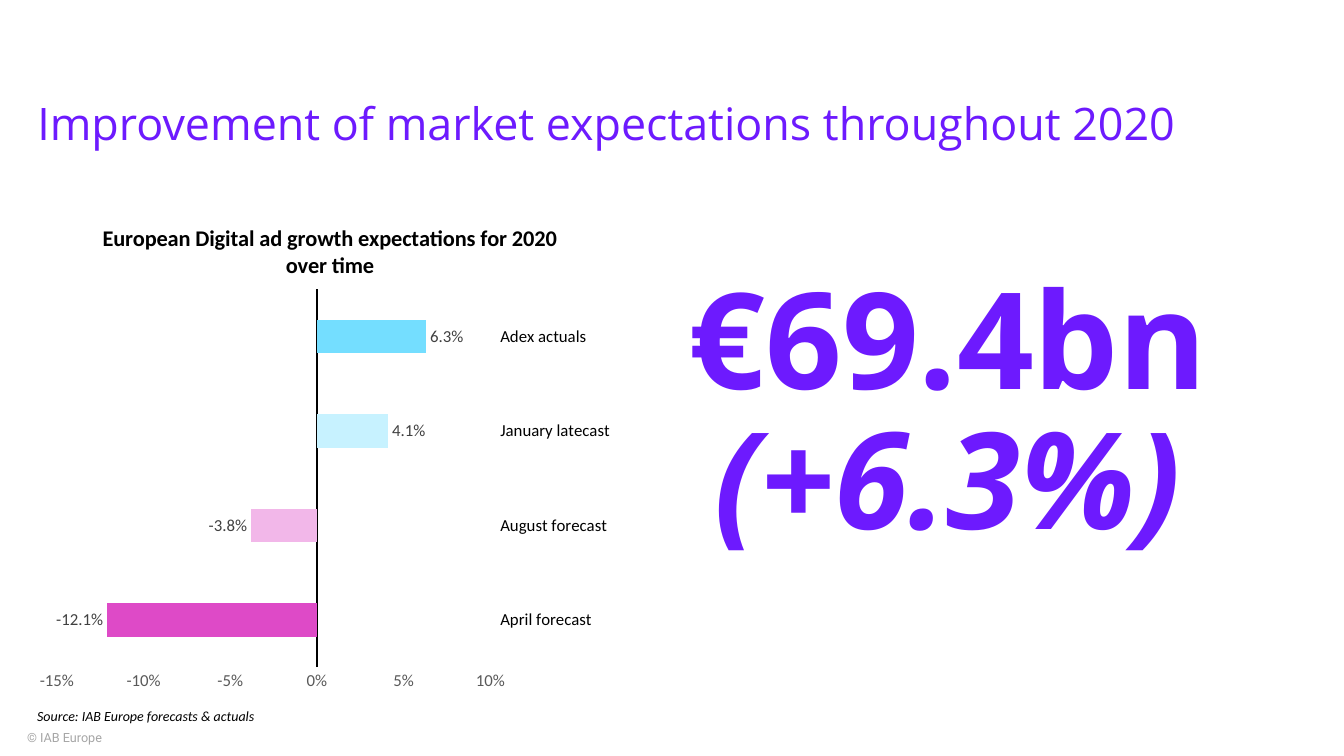
from lxml import etree
from pptx import Presentation
from pptx.chart.data import CategoryChartData
from pptx.dml.color import RGBColor
from pptx.enum.chart import XL_CHART_TYPE, XL_LABEL_POSITION, XL_TICK_LABEL_POSITION, XL_TICK_MARK
from pptx.enum.text import MSO_ANCHOR, PP_ALIGN
from pptx.oxml import parse_xml
from pptx.oxml.ns import nsdecls, qn
from pptx.util import Inches, Pt

PURPLE = RGBColor(0x6D, 0x1A, 0xFE)
BLACK = RGBColor(0, 0, 0)
DARK_GRAY = RGBColor(0x40, 0x40, 0x40)
GRAY = RGBColor(0x59, 0x59, 0x59)
LIGHT_GRAY = RGBColor(0xA6, 0xA6, 0xA6)
MAGENTA = RGBColor(0xDE, 0x4A, 0xC7)
PINK = RGBColor(0xF2, 0xB7, 0xE9)
PALE_BLUE = RGBColor(0xC7, 0xF2, 0xFF)
BLUE = RGBColor(0x74, 0xDE, 0xFF)

FORECASTS = [
    ("April forecast", -0.121, MAGENTA),
    ("August forecast", -0.038, PINK),
    ("January latecast", 0.041, PALE_BLUE),
    ("Adex actuals", 0.063, BLUE),
]


def format_font(font, size, color, name="Calibri", bold=False, italic=False):
    font.name = name
    font.size = Pt(size)
    font.bold = bold
    font.italic = italic
    font.color.rgb = color


def write_text(paragraph, text, align=PP_ALIGN.LEFT, line_spacing=1.0, space_before=0, **font_format):
    paragraph.alignment = align
    paragraph.line_spacing = line_spacing
    paragraph.space_before = Pt(space_before)
    run = paragraph.add_run()
    run.text = text
    format_font(run.font, **font_format)


def set_layout(parent, **fractions):
    """Place a chart part by fractions of the chart area."""
    for old_layout in parent.findall(qn("c:layout")):
        parent.remove(old_layout)
    layout = parse_xml(f"<c:layout {nsdecls('c')}><c:manualLayout/></c:layout>")
    for tag, value in fractions.items():
        etree.SubElement(layout[0], qn(f"c:{tag}")).set("val", str(value))
    return layout


class SlideBuilder:
    def __init__(self, presentation):
        self.slide = presentation.slides.add_slide(presentation.slide_layouts[5])

    def add_title(self, text, left, top, width, height):
        title = self.slide.shapes.title
        title.left, title.top = Inches(left), Inches(top)
        title.width, title.height = Inches(width), Inches(height)
        frame = title.text_frame
        frame.word_wrap = True
        frame.vertical_anchor = MSO_ANCHOR.MIDDLE
        write_text(frame.paragraphs[0], text, line_spacing=0.9, size=32, color=PURPLE, name="Open Sans")

    def add_text(self, left, top, width, height):
        box = self.slide.shapes.add_textbox(Inches(left), Inches(top), Inches(width), Inches(height))
        box.text_frame.word_wrap = True
        return box.text_frame

    def add_note(self, text, left, top, width, height, **font_format):
        write_text(self.add_text(left, top, width, height).paragraphs[0], text, **font_format)

    def add_headline_figures(self, amount, growth, left, top, width, height):
        frame = self.add_text(left, top, width, height)
        frame.margin_top = Inches(0.15)
        style = dict(align=PP_ALIGN.CENTER, line_spacing=0.8, size=96,
                     color=PURPLE, name="Open Sans", bold=True)
        write_text(frame.paragraphs[0], amount, **style)
        write_text(frame.add_paragraph(), growth, space_before=8, italic=True, **style)

    def add_growth_chart(self, title, forecasts, left, top, width, height):
        data = CategoryChartData(number_format="0.0%")
        data.categories = [name for name, _, _ in forecasts]
        data.add_series("Series 1", [value for _, value, _ in forecasts])
        chart = self.slide.shapes.add_chart(
            XL_CHART_TYPE.BAR_CLUSTERED, Inches(left), Inches(top), Inches(width), Inches(height), data).chart
        format_font(chart.font, 10, BLACK)
        chart.has_legend = False

        chart.has_title = True
        write_text(chart.chart_title.text_frame.paragraphs[0], title,
                   align=PP_ALIGN.CENTER, size=16, color=BLACK, bold=True)
        title_element = chart.chart_title._element
        title_layout = set_layout(title_element, xMode="edge", yMode="edge", x=0.12, y=0.04)
        title_element.find(qn("c:tx")).addnext(title_layout)
        plot_area = chart._chartSpace.chart.plotArea
        plot_area.insert(0, set_layout(plot_area, layoutTarget="inner", xMode="edge", yMode="edge",
                                       x=0.05, y=0.18, w=0.73, h=0.75))

        plot = chart.plots[0]
        plot.gap_width = 182
        plot.vary_by_categories = False
        series = plot.series[0]
        series.invert_if_negative = False
        for index, (_, _, color) in enumerate(forecasts):
            fill = series.points[index].format.fill
            fill.solid()
            fill.fore_color.rgb = color
        labels = series.data_labels
        labels.show_value = True
        labels.number_format = "0.0%"
        labels.number_format_is_linked = False
        labels.position = XL_LABEL_POSITION.OUTSIDE_END
        format_font(labels.font, 12, DARK_GRAY)

        for axis, color in ((chart.category_axis, BLACK), (chart.value_axis, GRAY)):
            axis.has_major_gridlines = False
            axis.major_tick_mark = axis.minor_tick_mark = XL_TICK_MARK.NONE
            format_font(axis.tick_labels.font, 12, color)
        category_axis, value_axis = chart.category_axis, chart.value_axis
        category_axis.tick_label_position = XL_TICK_LABEL_POSITION.HIGH
        category_axis.format.line.color.rgb = BLACK
        category_axis.format.line.width = Pt(0.75)
        value_axis.format.line.fill.background()
        value_axis.minimum_scale, value_axis.maximum_scale = -0.15, 0.1
        value_axis.major_unit = 0.05
        value_axis.tick_labels.number_format = "0%"
        value_axis.tick_labels.number_format_is_linked = False


def main():
    presentation = Presentation()
    presentation.slide_width, presentation.slide_height = Inches(13.33), Inches(7.5)
    builder = SlideBuilder(presentation)
    builder.add_note("© IAB Europe", 0.17, 7.19, 3.61, 0.25, size=9, color=LIGHT_GRAY, name="Roboto")
    builder.add_title("Improvement of market expectations throughout 2020", 0.27, 0.74, 12.15, 1.01)
    builder.add_growth_chart("European Digital ad growth expectations for 2020 over time", FORECASTS,
                             0.27, 1.97, 5.89, 5)
    builder.add_headline_figures("€69.4bn", "(+6.3%)", 6.67, 2.69, 5.47, 3.82)
    builder.add_note("Source: IAB Europe forecasts & actuals", 0.27, 6.97, 4.72, 0.27,
                     size=10, color=BLACK, italic=True)
    presentation.save("out.pptx")


if __name__ == "__main__":
    main()
